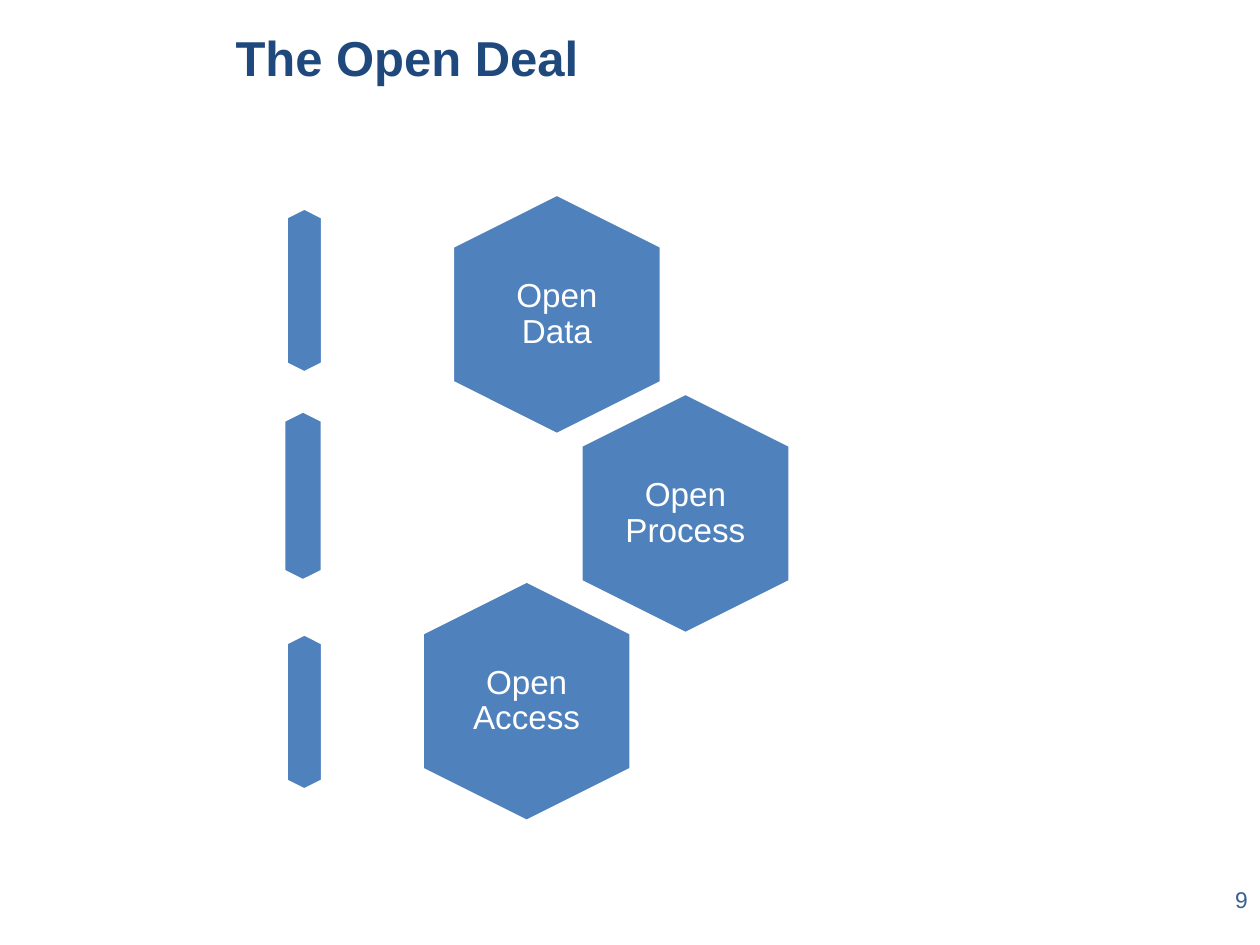
from collections import namedtuple

from pptx import Presentation
from pptx.dml.color import RGBColor
from pptx.enum.shapes import MSO_SHAPE
from pptx.enum.text import MSO_ANCHOR, PP_ALIGN
from pptx.util import Inches, Pt

COLORS = {"title": "1F497D", "hexagon": "4F81BD", "white": "FFFFFF", "number": "376092"}
FONT = "Arial"
SLIDE_WIDTH, SLIDE_HEIGHT = 10, 7.5

Box = namedtuple("Box", "left top width height")

TITLE_BOX = Box(1.77, 0, SLIDE_WIDTH - 1.77, 0.12 * SLIDE_HEIGHT)
NUMBER_BOX = Box(7.92, 6.98, SLIDE_WIDTH - 7.92, 0.37)
HEXAGON_WIDTH, HEXAGON_HEIGHT = 1.66, 1.91
DEALS = [  # label, left and top of its hexagon, upright bar beside it
    ("Open Data", 3.59, 1.54, Box(2.27, 1.65, 0.29, 1.31)),
    ("Open Process", 4.61, 3.12, Box(2.25, 3.26, 0.31, 1.35)),
    ("Open Access", 3.35, 4.61, Box(2.27, 5.03, 0.29, 1.24)),
]


def color(name):
    return RGBColor.from_string(COLORS[name])


def inches(box):
    return [Inches(length) for length in box]


def write(frame, text, size, color_name, align, margin_x=0.1, margin_y=0.05):
    frame.word_wrap = True
    frame.margin_left = frame.margin_right = Inches(margin_x)
    frame.margin_top = frame.margin_bottom = Inches(margin_y)
    frame.text = text
    paragraph = frame.paragraphs[0]
    paragraph.alignment = align
    paragraph.font.name = FONT
    paragraph.font.size = Pt(size)
    paragraph.font.color.rgb = color(color_name)
    return paragraph


def add_title(slide, box):
    title = slide.shapes.title
    title.left, title.top, title.width, title.height = inches(box)
    title.text_frame.vertical_anchor = MSO_ANCHOR.MIDDLE
    write(title.text_frame, "The Open Deal", 28, "title", PP_ALIGN.LEFT).font.bold = True


def add_upright_hexagon(slide, box, rotation):
    """Turn a lying hexagon a quarter so that it fills the tall box."""
    lying = Box(box.left + (box.width - box.height) / 2,
                box.top + (box.height - box.width) / 2, box.height, box.width)
    hexagon = slide.shapes.add_shape(MSO_SHAPE.HEXAGON, *inches(lying))
    hexagon.rotation = rotation
    hexagon.shadow.inherit = False
    hexagon.fill.solid()
    hexagon.fill.fore_color.rgb = color("hexagon")
    hexagon.line.color.rgb = color("white")
    hexagon.line.width = Pt(2)


def add_deal(slide, label, box, bar):
    add_upright_hexagon(slide, box, 90)
    add_upright_hexagon(slide, bar, 270)
    label_width, label_height = 1.14, 1.32
    label_box = Box(box.left + (box.width - label_width) / 2,
                    box.top + (box.height - label_height) / 2, label_width, label_height)
    frame = slide.shapes.add_textbox(*inches(label_box)).text_frame
    frame.vertical_anchor = MSO_ANCHOR.MIDDLE
    write(frame, label, 19, "white", PP_ALIGN.CENTER, 0.08, 0.08).line_spacing = 0.9


def add_slide_number(slide, box):
    frame = slide.shapes.add_textbox(*inches(box)).text_frame
    write(frame, "9", 13, "number", PP_ALIGN.RIGHT)


def main():
    deck = Presentation()
    deck.slide_width, deck.slide_height = Inches(SLIDE_WIDTH), Inches(SLIDE_HEIGHT)
    slide = deck.slides.add_slide(deck.slide_layouts[5])
    add_title(slide, TITLE_BOX)
    for label, left, top, bar in DEALS:
        add_deal(slide, label, Box(left, top, HEXAGON_WIDTH, HEXAGON_HEIGHT), bar)
    add_slide_number(slide, NUMBER_BOX)
    deck.save("out.pptx")


if __name__ == "__main__":
    main()
